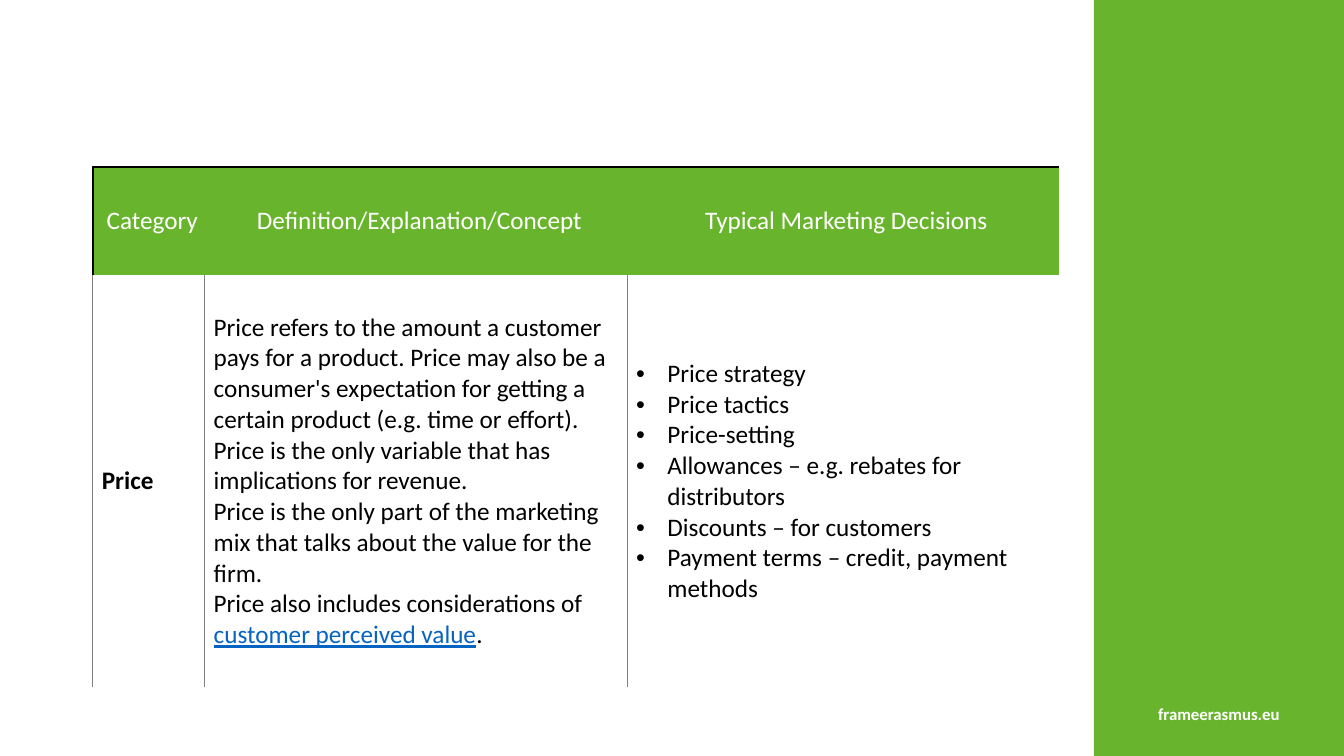
from lxml import etree
from pptx import Presentation
from pptx.dml.color import RGBColor
from pptx.enum.shapes import MSO_SHAPE
from pptx.enum.text import MSO_ANCHOR, PP_ALIGN
from pptx.oxml.ns import qn
from pptx.util import Emu, Pt

RECT = MSO_SHAPE.RECTANGLE
MIDDLE = MSO_ANCHOR.MIDDLE
LEFT, CENTER = PP_ALIGN.LEFT, PP_ALIGN.CENTER
SCALE = 9144  # 100 px to the inch
WIDTH, HEIGHT = 1333, 750
COLORS = {"green": "69B42D", "white": "FFFFFF", "black": "000000",
          "grey": "808080", "link": "0563C1"}
EDGE = ("black", 1.5)
RULE = ("grey", 0.5)

HEADS = ["Category", "Definition/Explanation/Concept",
         "Typical Marketing Decisions"]
CONCEPT = [
    "Price refers to the amount a customer pays for a product. Price may also "
    "be a consumer's expectation for getting a certain product "
    "(e.g. time or effort).",
    "Price is the only variable that has implications for revenue.",
    "Price is the only part of the marketing mix that talks about the value "
    "for the firm.",
    "Price also includes considerations of ",
]
TERM = "customer perceived value"
CHOICES = [
    "Price strategy", "Price tactics", "Price-setting",
    "Allowances – e.g. rebates for distributors",
    "Discounts – for customers",
    "Payment terms – credit, payment methods",
]


def px(size):
    return Emu(size * SCALE)


def rgb(name):
    return RGBColor.from_string(COLORS[name])


class Deck:
    font = "Calibri"

    def __init__(self):
        self.show = Presentation()
        self.show.slide_width = px(WIDTH)
        self.show.slide_height = px(HEIGHT)
        self.slide = self.show.slides.add_slide(self.show.slide_layouts[6])

    def style(self, run, color, size=18, bold=False, line=False):
        font = run.font
        font.name, font.size = self.font, Pt(size)
        font.bold, font.underline = bold, line
        font.color.rgb = rgb(color)

    def rect(self, box, color):
        shape = self.slide.shapes.add_shape(RECT, *map(px, box))
        shape.shadow.inherit = False
        shape.fill.solid()
        shape.fill.fore_color.rgb = rgb(color)
        shape.line.fill.background()

    def text(self, box, words, color, size):
        frame = self.slide.shapes.add_textbox(*map(px, box)).text_frame
        frame.word_wrap = True
        frame.text = words
        par = frame.paragraphs[0]
        par.alignment = CENTER
        self.style(par.runs[0], color, size, bold=True)

    def table(self, left, top, cols, rows):
        grid = self.slide.shapes.add_table(
            len(rows), len(cols), px(left), px(top),
            px(sum(cols)), px(sum(rows))).table
        grid.first_row = grid.horz_banding = False
        for col, width in zip(grid.columns, cols):
            col.width = px(width)
        for row, height in zip(grid.rows, rows):
            row.height = px(height)
        return grid

    def border(self, cell, lines):
        props = cell._tc.get_or_add_tcPr()
        for side in "LRTB":
            edge = etree.SubElement(props, qn("a:ln" + side))
            if side not in lines:
                etree.SubElement(edge, qn("a:noFill"))
                continue
            color, width = lines[side]
            edge.set("w", str(Pt(width)))
            fill = etree.SubElement(edge, qn("a:solidFill"))
            etree.SubElement(fill, qn("a:srgbClr"), val=COLORS[color])

    def bullet(self, par):
        props = par._p.get_or_add_pPr()
        props.set("marL", str(px(31)))
        props.set("indent", str(px(-31)))
        etree.SubElement(props, qn("a:buFont"), typeface="Arial")
        etree.SubElement(props, qn("a:buChar"), char="•")

    def cell(self, cell, words, lines, color="black", fill=None,
             align=LEFT, bold=False, dots=False):
        self.border(cell, lines)
        if fill:
            cell.fill.solid()
            cell.fill.fore_color.rgb = rgb(fill)
        else:
            cell.fill.background()
        cell.vertical_anchor = MIDDLE
        cell.margin_left, cell.margin_right = px(9), px(2)
        cell.margin_top = cell.margin_bottom = px(7)
        cell.text_frame.text = "\n".join(words)
        for par in cell.text_frame.paragraphs:
            par.alignment = align
            if dots:
                self.bullet(par)
            self.style(par.runs[0], color, bold=bold)

    def extend(self, par, words, color, line=False):
        run = par.add_run()
        run.text = words
        self.style(run, color, line=line)


def main():
    deck = Deck()

    # Side band with web address
    deck.rect((1085, 0, 248, HEIGHT), "green")
    deck.text((1085, 693, 248, 30), "frameerasmus.eu", "white", 12)

    # Table head
    grid = deck.table(92, 166, (111, 419, 428), (107, 409))
    for col, head in enumerate(HEADS):
        lines = {"T": EDGE} if col else {"T": EDGE, "L": EDGE}
        deck.cell(grid.cell(0, col), [head], lines, "white", "green", CENTER)

    # Price row
    sides = {"L": RULE, "R": RULE}
    deck.cell(grid.cell(1, 0), ["Price"], sides, bold=True)
    deck.cell(grid.cell(1, 1), CONCEPT, sides)
    deck.cell(grid.cell(1, 2), CHOICES, {"L": RULE}, dots=True)

    # Underlined term that closes the concept
    last = grid.cell(1, 1).text_frame.paragraphs[-1]
    deck.extend(last, TERM, "link", line=True)
    deck.extend(last, ".", "black")

    deck.show.save("out.pptx")


if __name__ == "__main__":
    main()
